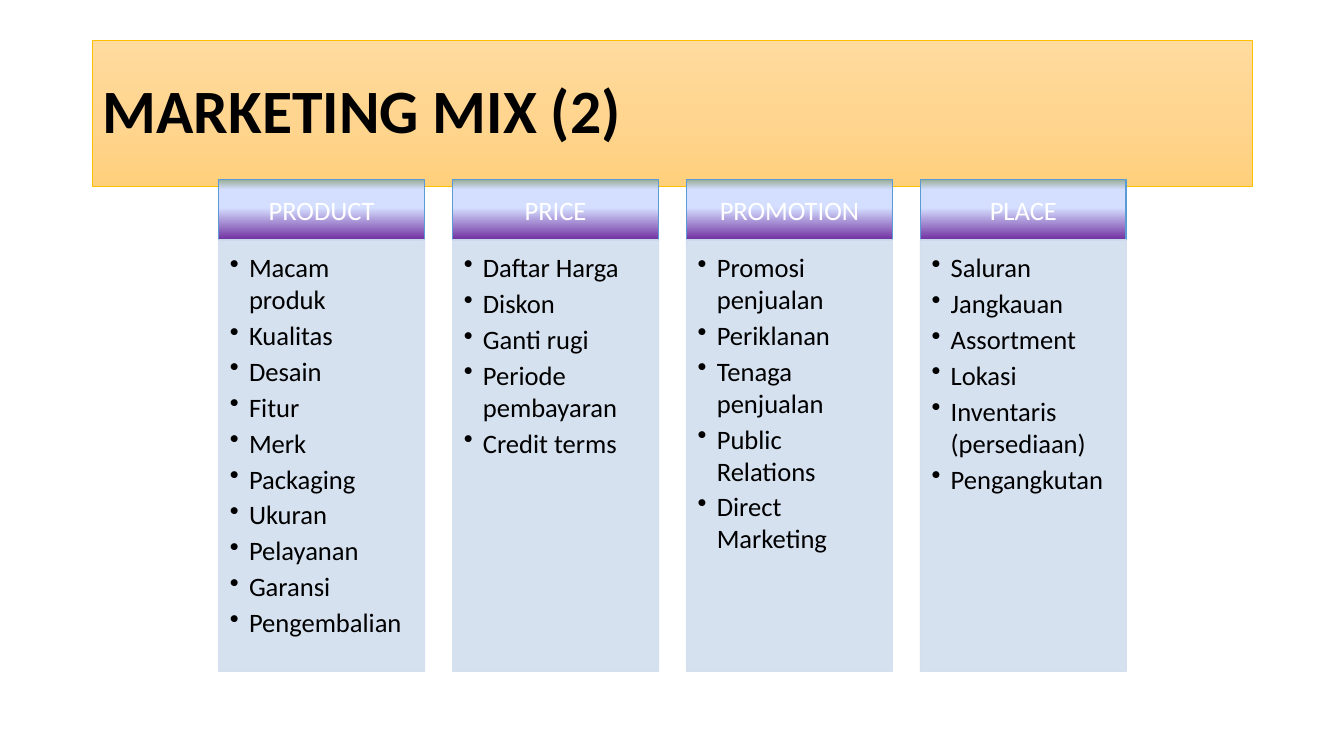
import pptx
import pptx.util
import pptx.dml.color
import pptx.enum.shapes
import pptx.enum.text
import pptx.oxml
import pptx.oxml.ns
from lxml import etree

TITLE = "MARKETING MIX (2)"
MIX = {
    "PRODUCT": ["Macam produk", "Kualitas", "Desain", "Fitur", "Merk", "Packaging",
                "Ukuran", "Pelayanan", "Garansi", "Pengembalian"],
    "PRICE": ["Daftar Harga", "Diskon", "Ganti rugi", "Periode pembayaran", "Credit terms"],
    "PROMOTION": ["Promosi penjualan", "Periklanan", "Tenaga penjualan",
                  "Public Relations", "Direct Marketing"],
    "PLACE": ["Saluran", "Jangkauan", "Assortment", "Lokasi",
              "Inventaris (persediaan)", "Pengangkutan"],
}
COLORS = {"title_line": "FFC000", "header_line": "5B9BD5", "panel": "D2DEEF",
          "dark": "000000", "light": "FFFFFF"}
TITLE_GRADIENT = [(0, "FFDB9E"), (50, "FFD590"), (100, "FFD07C")]
HEADER_GRADIENT = [(0, "7030A0"), (53, "D4DEFF"), (83, "D4DEFF"), (100, "96AB94")]
FONT = "Calibri"

SLIDE_W, SLIDE_H = 13.33, 7.5
TITLE_BOX = (0.92, 0.4, 11.5, 1.45)
COLUMN_LEFT, COLUMN_W, COLUMN_STEP = 2.17, 2.04, 2.32
HEADER_TOP, HEADER_H, PANEL_H = 1.78, 0.6, 4.28
TEXT_SIZE, BULLET_INDENT, PANEL_OPACITY = 19, 0.19, 90

Inches, Pt = pptx.util.Inches, pptx.util.Pt
qn = pptx.oxml.ns.qn
ALIGN, ANCHOR = pptx.enum.text.PP_ALIGN, pptx.enum.text.MSO_ANCHOR


def rgb(name):
    return pptx.dml.color.RGBColor.from_string(COLORS[name])


def add_box(slide, place, line, line_width, anchor, insets):
    box = slide.shapes.add_shape(pptx.enum.shapes.MSO_SHAPE.RECTANGLE, *map(Inches, place))
    box.shadow.inherit = False
    box.line.color.rgb = rgb(line)
    box.line.width = Pt(line_width)
    frame = box.text_frame
    frame.word_wrap = True
    frame.vertical_anchor = anchor
    for side, inset in zip(("left", "top", "right", "bottom"), insets):
        setattr(frame, f"margin_{side}", Inches(inset))
    return box


def fill_gradient(box, stops, angle):
    """Fill with any number of stops; the angle is clockwise from left to right."""
    gradient = pptx.oxml.parse_xml(
        f'<a:gradFill {pptx.oxml.ns.nsdecls("a")} rotWithShape="1"><a:gsLst>'
        + "".join(f'<a:gs pos="{pos * 1000}"><a:srgbClr val="{color}"/></a:gs>'
                  for pos, color in stops)
        + f'</a:gsLst><a:lin ang="{angle * 60000}" scaled="0"/></a:gradFill>')
    box._element.spPr.find(qn("a:prstGeom")).addnext(gradient)


def write(paragraph, text, color, **formats):
    paragraph.text = text
    font = paragraph.runs[0].font
    font.color.rgb = rgb(color)
    for name, value in {"name": FONT, "size": Pt(TEXT_SIZE), **formats}.items():
        setattr(font, name, value)


def add_bullet(paragraph):
    properties = paragraph._p.get_or_add_pPr()
    indent = Inches(BULLET_INDENT)
    properties.set("marL", str(indent))
    properties.set("indent", str(-indent))
    etree.SubElement(properties, qn("a:buChar")).set("char", "•")


def add_title(slide):
    banner = add_box(slide, TITLE_BOX, "title_line", 0.5, ANCHOR.MIDDLE, (0.1, 0.05, 0.1, 0.05))
    fill_gradient(banner, TITLE_GRADIENT, 90)
    heading = banner.text_frame.paragraphs[0]
    heading.alignment = ALIGN.LEFT
    heading.line_spacing = 0.9
    write(heading, TITLE, "dark", size=Pt(44), bold=True)


def add_column(slide, left, name, items):
    header = add_box(slide, (left, HEADER_TOP, COLUMN_W, HEADER_H), "header_line", 1,
                     ANCHOR.MIDDLE, (0.15, 0.08, 0.15, 0.08))
    fill_gradient(header, HEADER_GRADIENT, 270)
    label = header.text_frame.paragraphs[0]
    label.alignment = ALIGN.CENTER
    write(label, name, "light")

    panel = add_box(slide, (left, HEADER_TOP + HEADER_H, COLUMN_W, PANEL_H), "panel", 1,
                    ANCHOR.TOP, (0.11, 0.11, 0.15, 0.17))
    panel.fill.solid()
    panel.fill.fore_color.rgb = rgb("panel")
    for color in panel._element.spPr.iter(qn("a:srgbClr")):
        etree.SubElement(color, qn("a:alpha")).set("val", str(PANEL_OPACITY * 1000))
    frame = panel.text_frame
    for index, item in enumerate(items):
        entry = frame.add_paragraph() if index else frame.paragraphs[0]
        add_bullet(entry)
        entry.level = 1
        entry.alignment = ALIGN.LEFT
        entry.space_after = Pt(TEXT_SIZE * 0.15)
        write(entry, item, "dark")


def main():
    deck = pptx.Presentation()
    deck.slide_width, deck.slide_height = Inches(SLIDE_W), Inches(SLIDE_H)
    slide = deck.slides.add_slide(deck.slide_layouts[6])
    add_title(slide)
    for index, (name, items) in enumerate(MIX.items()):
        add_column(slide, COLUMN_LEFT + index * COLUMN_STEP, name, items)
    deck.save("out.pptx")


if __name__ == "__main__":
    main()
